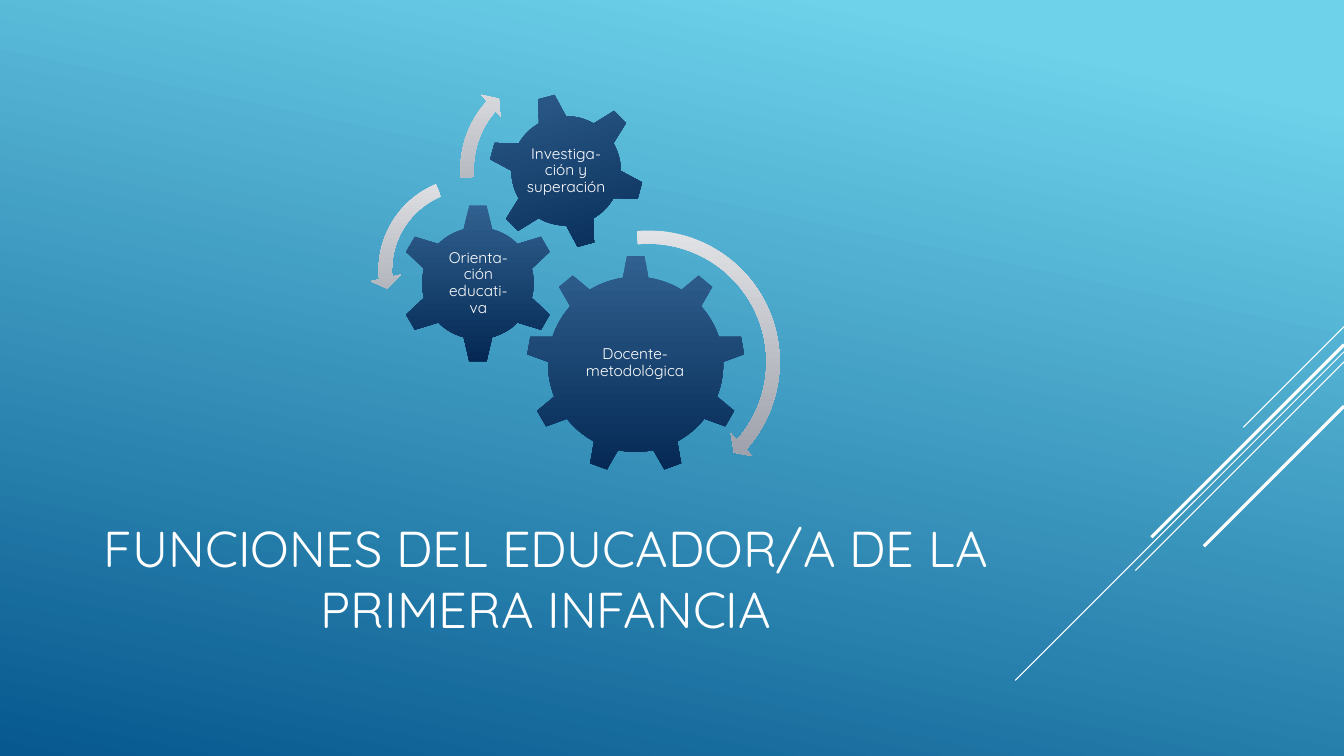
from lxml import etree
from pptx import Presentation
from pptx.dml.color import RGBColor
from pptx.enum import shapes, text
from pptx.oxml.ns import qn
from pptx.util import Inches, Pt

SHAPE = shapes.MSO_SHAPE
FONT = "Quicksand"
WHITE = "FFFFFF"
SKY = [(0.1, "6ED2EB"), (1, "06588E")]
NAVY = [(0, "316190"), (1, "042853")]
SILVER = [(0, "E3E5E8"), (1, "91939F")]

TITLE = ("FUNCIONES DEL EDUCADOR/A DE LA PRIMERA INFANCIA", (0.75, 4.91, 9.33, 1.65))

# label, gear shape, gear box, rotation, label box
GEARS = [
    ("Docente-metodológica", SHAPE.GEAR_9, (5.22, 2.53, 2.17, 2.17), 0, (5.65, 3.04, 1.3, 1.12)),
    ("Orienta-ción educati-va", SHAPE.GEAR_6, (3.95, 2.02, 1.58, 1.58), 0, (4.35, 2.42, 0.79, 0.78)),
    ("Investiga-ción y superación", SHAPE.GEAR_6, (4.84, 0.92, 1.55, 1.55), 345, (5.18, 1.26, 0.87, 0.87)),
]
ARROWS = [
    (SHAPE.CIRCULAR_ARROW, (5.04, 2.2, 2.78, 2.78), (0.047, 2.99, 25.007, 158.95, 0.055)),
    (SHAPE.LEFT_CIRCULAR_ARROW, (3.67, 1.67, 2.02, 2.02), (0.065, 4.3, 104.891, 148.378, 0.075)),
    (SHAPE.CIRCULAR_ARROW, (4.48, 0.59, 2.18, 2.18), (0.06, 3.941, 133.138, 105.082, 0.07)),
]
RIGHT_EDGE = 13.33
RAYS = [(3.24, 1, 0.75), (3.49, 3.26, 0.75), (3.59, 2.07, 0.75), (3.42, 1.91, 2.25), (4.03, 1.39, 2.25)]


def rgb(value):
    return RGBColor.from_string(value)


def inches(box):
    return [Inches(length) for length in box]


def paint(fill, colours, clockwise=90):
    fill.gradient()
    fill.gradient_angle = 360 - clockwise
    for stop, (position, colour) in zip(fill.gradient_stops, colours):
        stop.position = position
        stop.color.rgb = rgb(colour)


def write(holder, words, size, inset=None, spacing=None):
    frame = holder.text_frame
    frame.word_wrap = True
    frame.auto_size = text.MSO_AUTO_SIZE.NONE
    frame.vertical_anchor = text.MSO_ANCHOR.MIDDLE
    if inset is not None:
        frame.margin_left = frame.margin_right = Inches(inset)
        frame.margin_top = frame.margin_bottom = Inches(inset)
    line = frame.paragraphs[0]
    line.alignment = text.PP_ALIGN.CENTER
    if spacing:
        line.line_spacing = spacing
    run = line.add_run()
    run.text = words
    run.font.size = Pt(size)
    run.font.name = FONT
    run.font.color.rgb = rgb(WHITE)


def add_preset(slide, preset, box, colours):
    shape = slide.shapes.add_shape(preset, *inches(box))
    shape.shadow.inherit = False
    shape.line.fill.background()
    paint(shape.fill, colours)
    return shape


def main():
    deck = Presentation()
    deck.slide_width, deck.slide_height = Inches(RIGHT_EDGE), Inches(7.5)
    slide = deck.slides.add_slide(deck.slide_layouts[5])
    paint(slide.background.fill, SKY, 102)

    for top, reach, weight in RAYS:
        ends = inches((RIGHT_EDGE, top, RIGHT_EDGE - reach, top + reach))
        ray = slide.shapes.add_connector(shapes.MSO_CONNECTOR.STRAIGHT, *ends)
        ray.line.color.rgb = rgb(WHITE)
        ray.line.width = Pt(weight)
        etree.SubElement(ray._element.spPr, qn("a:effectLst"))

    words, box = TITLE
    title = slide.shapes.title
    title.left, title.top, title.width, title.height = inches(box)
    write(title, words, 36)

    for label, preset, gear_box, rotation, label_box in GEARS:
        gear = add_preset(slide, preset, gear_box, NAVY)
        gear.rotation = rotation
        write(slide.shapes.add_textbox(*inches(label_box)), label, 11, inset=0.02, spacing=0.9)

    for preset, arrow_box, bends in ARROWS:
        arrow = add_preset(slide, preset, arrow_box, SILVER)
        for index, bend in enumerate(bends):
            arrow.adjustments[index] = bend

    deck.save("out.pptx")


if __name__ == "__main__":
    main()
